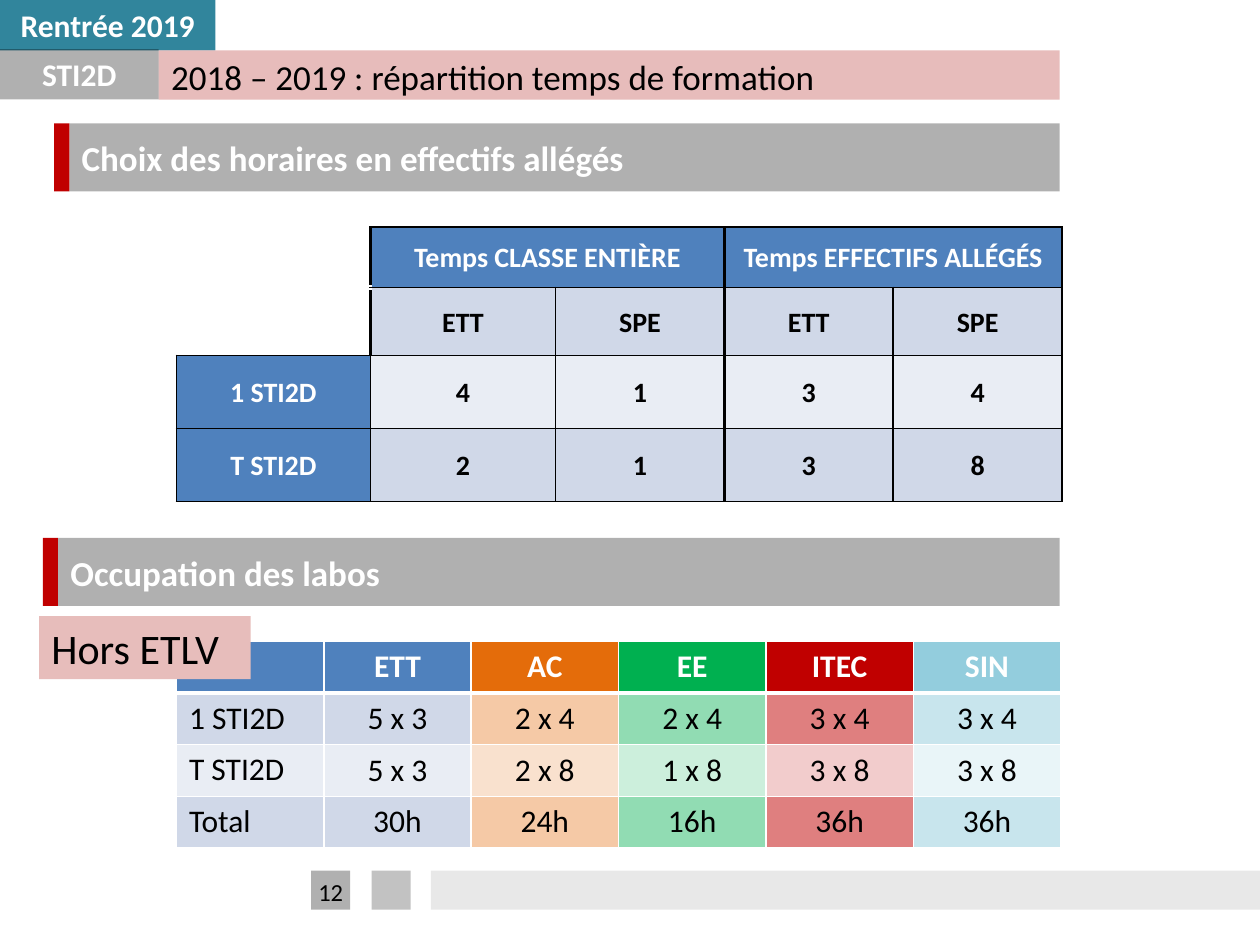
from lxml.etree import SubElement
from pptx import Presentation
from pptx.dml.color import RGBColor
from pptx.enum.shapes import MSO_SHAPE as Shape
from pptx.enum.text import MSO_ANCHOR as Anchor, PP_ALIGN as Align
from pptx.oxml.ns import qn
from pptx.util import Inches, Pt

FONT = "Calibri"
BLACK, WHITE, RED, BLUE = "000000", "FFFFFF", "C00000", "4F81BD"
DARK_BAND, LIGHT_BAND = "D0D8E8", "E9EDF4"
GREY = (BLACK, 31)

BARS = [
    ((0, 0, 1.71, 0.4), ("31859C", 100), "Rentrée 2019", 18, Align.CENTER),
    ((1.26, 0.4, 7.15, 0.39), ("D99694", 63), "", 18, Align.LEFT),
    ((2.95, 6.91, 0.31, 0.31), (BLACK, 24), "", 18, Align.LEFT),
    ((3.42, 6.91, 6.58, 0.31), (BLACK, 9), "", 18, Align.LEFT),
    ((2.47, 6.91, 0.31, 0.31), GREY, "", 18, Align.LEFT),
    ((0, 0.39, 1.26, 0.4), GREY, "STI2D", 18, Align.CENTER),
]
HEADINGS = [
    (0.34, 4.27, "Occupation des labos"),
    (0.43, 0.98, "Choix des horaires en effectifs allégés"),
]
HEADING_RIGHT, HEADING_HEIGHT, ACCENT_WIDTH = 8.41, 0.54, 0.12

HOURS = [
    ["", "Temps CLASSE ENTIÈRE", "", "Temps EFFECTIFS ALLÉGÉS", ""],
    ["", "ETT", "SPE", "ETT", "SPE"],
    ["1 STI2D", "4", "1", "3", "4"],
    ["T STI2D", "2", "1", "3", "8"],
]
HOURS_COLUMNS = [1.54, 1.47, 1.34, 1.34, 1.34]
HOURS_ROWS = [0.48, 0.54, 0.58, 0.58]

LABS = [
    ["", "ETT", "AC", "EE", "ITEC", "SIN"],
    ["1 STI2D", "5 x 3", "2 x 4", "2 x 4", "3 x 4", "3 x 4"],
    ["T STI2D", "5 x 3", "2 x 8", "1 x 8", "3 x 8", "3 x 8"],
    ["Total", "30h", "24h", "16h", "36h", "36h"],
]
LAB_COLORS = [(BLUE, 0), (BLUE, 0), ("E46C0A", 36), ("00B050", 43), (RED, 50), ("93CDDD", 50)]
LAB_COLUMNS = [1.17] * 6
LAB_ROWS = [0.41] * 4


def rgb(color):
    return RGBColor.from_string(color)


def paint(fill, properties, color, opacity=100):
    fill.solid()
    fill.fore_color.rgb = rgb(color)
    if opacity < 100:
        tint = properties.find(qn("a:solidFill")).find(qn("a:srgbClr"))
        SubElement(tint, qn("a:alpha"), val=str(opacity * 1000))


def write(frame, text, size, color, bold=False, align=Align.LEFT, spacing=None):
    para = frame.paragraphs[0]
    para.alignment = align
    if spacing:
        para.line_spacing = spacing
    span = para.add_run()
    span.text = text
    span.font.name = FONT
    span.font.size = Pt(size)
    span.font.bold = bold
    span.font.color.rgb = rgb(color)


def add_bar(page, place, paint_spec, text="", size=18, align=Align.LEFT):
    bar = page.shapes.add_shape(Shape.RECTANGLE, *map(Inches, place))
    bar.shadow.inherit = False
    bar.line.fill.background()
    paint(bar.fill, bar._element.spPr, *paint_spec)
    bar.text_frame.vertical_anchor = Anchor.MIDDLE
    if text:
        write(bar.text_frame, text, size, WHITE, True, align)


def add_text(page, place, text, size, align=Align.LEFT, anchor=Anchor.TOP):
    box = page.shapes.add_textbox(*map(Inches, place))
    box.text_frame.word_wrap = True
    box.text_frame.vertical_anchor = anchor
    write(box.text_frame, text, size, BLACK, align=align)
    return box


def add_grid(page, left, top, columns, rows):
    frame = page.shapes.add_table(
        len(rows), len(columns), Inches(left), Inches(top), Inches(sum(columns)), Inches(sum(rows))
    )
    table = frame.table
    table.first_row = table.horz_banding = False
    for column, width in zip(table.columns, columns):
        column.width = Inches(width)
    for row, height in zip(table.rows, rows):
        row.height = Inches(height)
    return table


def set_borders(cell, left, right, top, bottom):
    properties = cell._tc.get_or_add_tcPr()
    for side, (color, width) in zip("LRTB", (left, right, top, bottom)):
        line = SubElement(properties, qn(f"a:ln{side}"), w=str(Pt(width)))
        SubElement(SubElement(line, qn("a:solidFill")), qn("a:srgbClr"), val=color)


def hours_borders(r, c):
    thin, thick, clear = (BLACK, 1), (BLACK, 1.5), (WHITE, 1)
    if c == 0 and r < 2:
        return clear, thick, clear, (WHITE, 3) if r == 0 else thin
    left = thick if c == 3 or (c == 1 and r < 2) else thin
    return left, thick if c == 2 else thin, thin, thin


def add_hours(page):
    table = add_grid(page, 1.4, 1.8, HOURS_COLUMNS, HOURS_ROWS)
    for r, row in enumerate(HOURS):
        for c, text in enumerate(row):
            cell = table.cell(r, c)
            set_borders(cell, *hours_borders(r, c))
            header = r == 0 or c == 0
            if c == 0 and r < 2:
                cell.fill.background()
            else:
                band = LIGHT_BAND if r == 2 else DARK_BAND
                paint(cell.fill, cell._tc.tcPr, BLUE if header else band)
            cell.vertical_anchor = Anchor.MIDDLE
            cell.margin_left = cell.margin_right = Inches(0.05)
            cell.margin_top = cell.margin_bottom = 0
            if text:
                write(cell.text_frame, text, 16, WHITE if header else BLACK, True, Align.CENTER, 1.07)
    for c in (1, 3):
        table.cell(0, c).merge(table.cell(0, c + 1))


def add_labs(page):
    table = add_grid(page, 1.4, 5.09, LAB_COLUMNS, LAB_ROWS)
    for r, row in enumerate(LABS):
        for c, text in enumerate(row):
            cell = table.cell(r, c)
            color, opacity = LAB_COLORS[c]
            thin, thick = (WHITE, 1), (WHITE, 3)
            set_borders(cell, thin, thin, thick if r == 1 else thin, thick if r == 0 else thin)
            if r == 0:
                shade = (color,)
            elif c < 2:
                shade = (LIGHT_BAND if r == 2 else DARK_BAND,)
            else:
                shade = (color, 20 if r == 2 else opacity)
            paint(cell.fill, cell._tc.tcPr, *shade)
            cell.vertical_anchor = Anchor.MIDDLE if c else Anchor.TOP
            if text:
                align = Align.CENTER if c else Align.LEFT
                write(cell.text_frame, text, 18, BLACK if r else WHITE, r == 0, align)


def main():
    deck = Presentation()
    deck.slide_width, deck.slide_height = Inches(10), Inches(7.5)
    page = deck.slides.add_slide(deck.slide_layouts[6])
    for bar in BARS:
        add_bar(page, *bar)
    title = "2018 – 2019 : répartition temps de formation"
    add_text(page, (1.26, 0.39, 7.15, 0.44), title, 20, anchor=Anchor.MIDDLE)
    add_text(page, (2.34, 6.91, 0.57, 0.4), "12", 14, Align.CENTER)
    add_hours(page)
    add_labs(page)
    for left, top, text in HEADINGS:
        start = left + ACCENT_WIDTH
        add_bar(page, (start, top, HEADING_RIGHT - start, HEADING_HEIGHT), GREY, text, 20)
        add_bar(page, (left, top, ACCENT_WIDTH, HEADING_HEIGHT), (RED, 100))
    note = add_text(page, (0.31, 4.89, 1.68, 0.5), "Hors ETLV", 24)
    paint(note.fill, note._element.spPr, "E7BDBB")
    deck.save("out.pptx")


if __name__ == "__main__":
    main()
